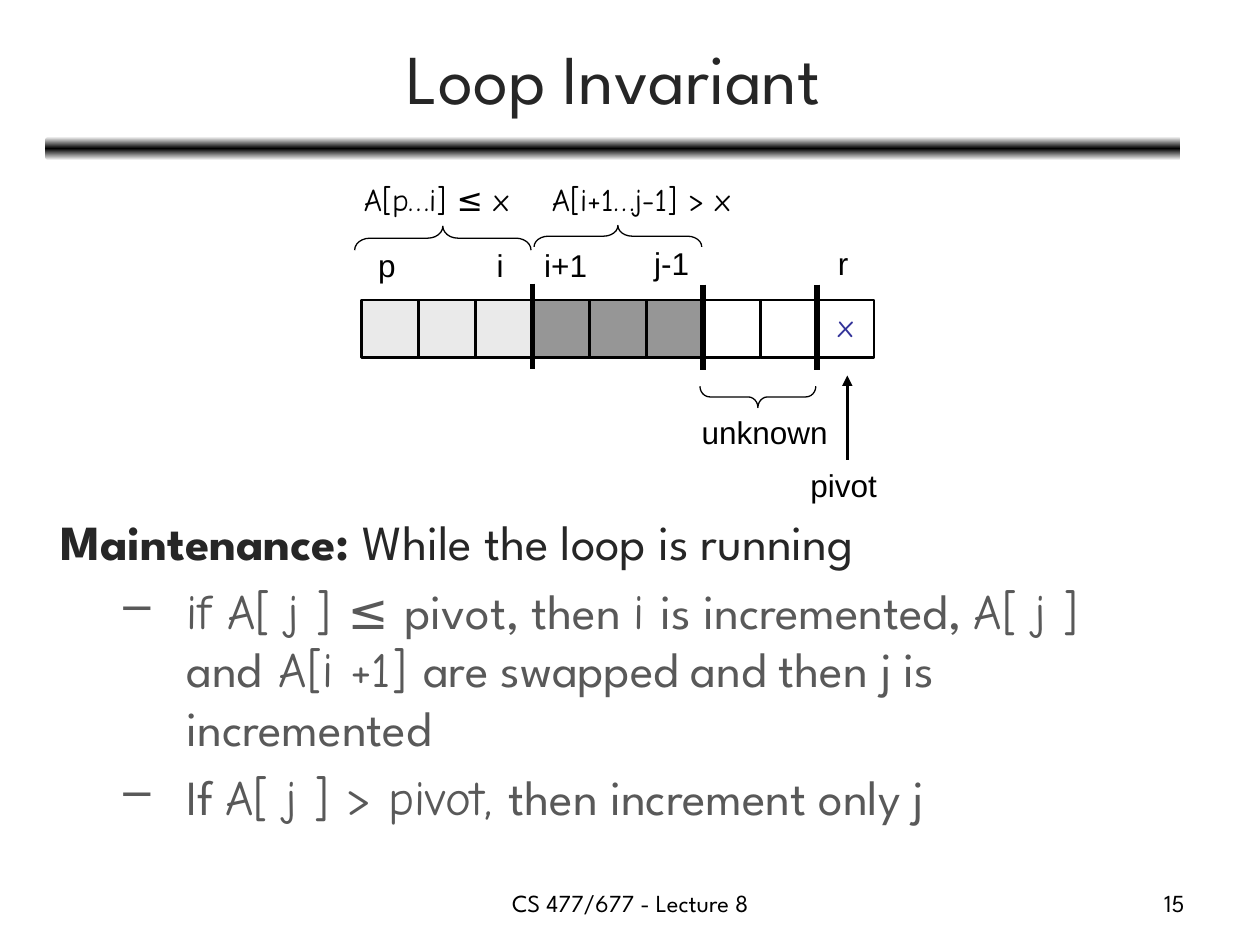
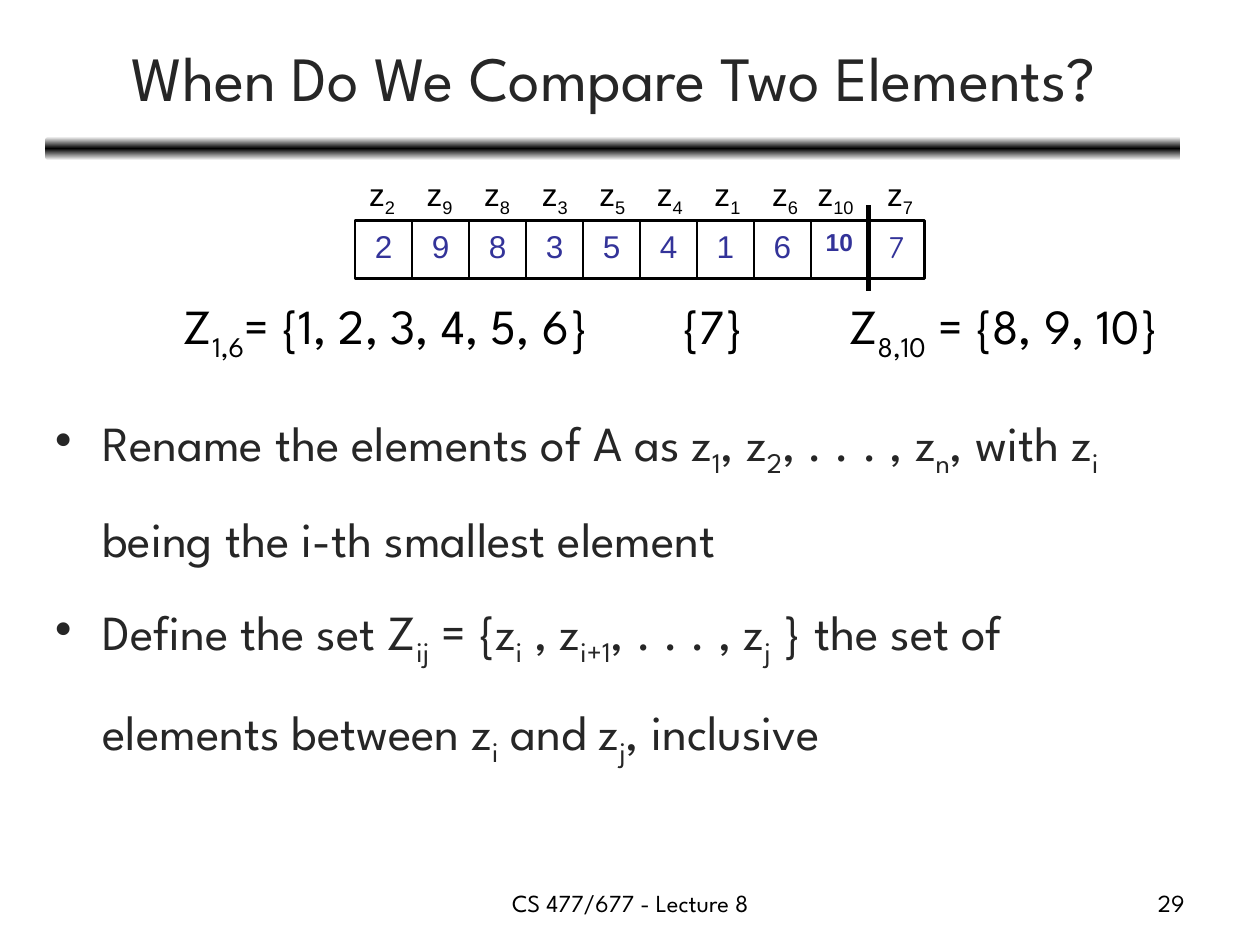
from copy import deepcopy

from lxml.etree import SubElement
from pptx import Presentation
from pptx.dml.color import RGBColor
from pptx.enum.shapes import MSO_CONNECTOR, MSO_SHAPE
from pptx.enum.text import MSO_ANCHOR, PP_ALIGN
from pptx.oxml.ns import qn
from pptx.util import Pt

BLACK = RGBColor(0x00, 0x00, 0x00)
WHITE = RGBColor(0xFF, 0xFF, 0xFF)
DARK = RGBColor(0x26, 0x26, 0x26)
GRAY = RGBColor(0x59, 0x59, 0x59)
BLUE = RGBColor(0x33, 0x33, 0x99)
PALE = RGBColor(0xEA, 0xEA, 0xEA)
MID = RGBColor(0x96, 0x96, 0x96)
SANS, HAND, ARIAL = "League Spartan", "Comic Neue", "Arial"
LEFT, MIDDLE, RIGHT = PP_ALIGN.LEFT, PP_ALIGN.CENTER, PP_ALIGN.RIGHT
CELL_W, CELL_H = 32.55, 33.1


def frame(slide, x, y, w, h, wrap=True):
    """Add an empty text box and return its text frame."""
    text = slide.shapes.add_textbox(Pt(x), Pt(y), Pt(w), Pt(h)).text_frame
    text.word_wrap = wrap
    return text


def write(box, text, size=18, font=ARIAL, color=BLACK, align=LEFT, bold=False,
          alt=None, before=0, lines=None, left=0, hang=0, bullet=None):
    """Add a paragraph; every second part between bars takes the alt format:
    "sub", "bold" or the name of a font."""
    para = box.paragraphs[0]
    if para.runs:
        para = box.add_paragraph()
        para.space_before = Pt(before)
    para.alignment = align
    if lines:
        para.line_spacing = lines
    if left:
        props = para._p.get_or_add_pPr()
        props.set("marL", str(Pt(left)))
        props.set("indent", str(-Pt(hang)))
        if bullet:
            SubElement(props, qn("a:buChar")).set("char", bullet)
    for i, part in enumerate(text.split("|")):
        if not part:
            continue
        run = para.add_run()
        run.text = part
        style = alt if i % 2 else None
        run.font.size = Pt(size)
        run.font.name = HAND if style == HAND else font
        run.font.bold = bold or style == "bold"
        run.font.color.rgb = color
        if style == "sub":
            run.font._element.set("baseline", "-25000")


deck = Presentation()
deck.slide_width, deck.slide_height = Pt(720), Pt(540)
loop = deck.slides.add_slide(deck.slide_layouts[6])
pairs = deck.slides.add_slide(deck.slide_layouts[6])

# Band, title, footer and page number
for slide, title, size, page in [
    (loop, "Loop Invariant", 40, "15"),
    (pairs, "When Do We Compare Two Elements?", 36, "29"),
]:
    band = slide.shapes.add_shape(MSO_SHAPE.ROUNDED_RECTANGLE, Pt(26), Pt(78), Pt(648.7), Pt(13.7))
    band.shadow.inherit = False
    band.line.fill.background()
    band.fill.gradient()
    band.fill.gradient_angle = 90
    stops = band._element.spPr.find(".//" + qn("a:gsLst"))
    stops.insert(1, deepcopy(stops[0]))
    for stop, color, place in zip(band.fill.gradient_stops, (WHITE, BLACK, WHITE), (0, 0.5, 1)):
        stop.color.rgb = color
        stop.position = place
    head = frame(slide, 26.6, 8, 648, 71.3)
    head.vertical_anchor = MSO_ANCHOR.MIDDLE
    write(head, title, size=size, font=SANS, color=DARK, align=MIDDLE)
    write(frame(slide, 246.2, 504, 228.2, 25.2), "CS 477/677 - Lecture 8",
          size=14, font=SANS, align=MIDDLE)
    write(frame(slide, 516.2, 504, 167.8, 25.2), page, size=14, font=SANS, align=RIGHT)

# Array cells on both slides: value and fill
parts = [("", PALE)] * 3 + [("", MID)] * 3 + [("", None)] * 2 + [("x", None)]
values = [(v, None) for v in "2 9 8 3 5 4 1 6 10 7".split()]
for slide, left, top, cells in [(loop, 206.6, 171.4, parts), (pairs, 203, 126, values)]:
    for i, (value, fill) in enumerate(cells):
        cell = slide.shapes.add_shape(MSO_SHAPE.RECTANGLE, Pt(left + i * CELL_W), Pt(top),
                                      Pt(CELL_W), Pt(CELL_H))
        cell.shadow.inherit = False
        cell.line.color.rgb = BLACK
        cell.line.width = Pt(1.5)
        if fill:
            cell.fill.solid()
            cell.fill.fore_color.rgb = fill
        else:
            cell.fill.background()
        if value:
            cell.text_frame.vertical_anchor = MSO_ANCHOR.TOP
            write(cell.text_frame, value, size=14 if value == "10" else 18, color=BLUE,
                  font=HAND if value in "x7" else ARIAL, align=MIDDLE, bold=value == "10")

# Thick dividers and the pivot arrow
for slide, x, start, end, width in [
    (loop, 304.2, 162, 211, 3), (loop, 401.8, 162.7, 211.7, 3),
    (loop, 466.9, 162.7, 211.7, 3), (pairs, 496.1, 117.4, 166.3, 3),
    (loop, 484.2, 262.8, 214.6, 1.5),
]:
    line = slide.shapes.add_connector(MSO_CONNECTOR.STRAIGHT, Pt(x), Pt(start), Pt(x), Pt(end))
    line.line.color.rgb = BLACK
    line.line.width = Pt(width)
    if end < start:
        SubElement(line.line._get_or_add_ln(), qn("a:tailEnd")).set("type", "triangle")
    SubElement(line._element.spPr, qn("a:effectLst"))

# Braces: box before turning, angle, curl
for x, y, w, h, angle, curl in [
    (246.2, 85.7, 13.7, 100.8, 90, 0.63),
    (347, 87.1, 12.2, 95.8, 90, 0.67),
    (427, 193.7, 12.2, 66.2, 270, 0.46),
]:
    brace = loop.shapes.add_shape(MSO_SHAPE.LEFT_BRACE, Pt(x), Pt(y), Pt(w), Pt(h))
    brace.rotation = angle
    brace.adjustments[0] = curl
    brace.shadow.inherit = False
    brace.fill.background()
    brace.line.color.rgb = BLACK
    brace.line.width = Pt(0.75)

# Labels around the array
write(frame(loop, 200.9, 99.4, 105.1, 28.8), "A[p…i] ≤ x", font=HAND)
write(frame(loop, 308.2, 99.4, 137.5, 28.8), "A[i+1…j-1] > x", font=HAND)
for text, x, y, w in [
    ("p", 208.8, 136.8, 24.5), ("i", 276.5, 136.8, 18.7), ("i+1", 303.8, 136.8, 38.9),
    ("j-1", 366.5, 136.1, 34.6), ("r", 471.6, 136.1, 20.2),
    ("unknown", 393.8, 232.6, 86.4), ("pivot", 455.8, 262.8, 52.6),
]:
    write(frame(loop, x, y, w, 28.8, wrap=False), text, align=MIDDLE)

body = frame(loop, 27.4, 288.7, 628.6, 232.6)
write(body, "|Maintenance: |While the loop is running", size=28, font=SANS, color=DARK,
      alt="bold", left=41.8, hang=41.8)
for text in [
    "|if A[ j ] ≤ |pivot, then |i |is incremented, |A[ j ] |and| A[i +1] |"
    "are swapped and then j is incremented",
    "If |A[ j ] > pivot, |then increment only j",
]:
    write(body, text, size=28, font=SANS, color=GRAY, alt=HAND, before=5.6,
          left=72, hang=36, bullet="–")

# Names of the elements, then the sets
for i, (value, _) in enumerate(values):
    x, w = (460.1, 36.7) if value == "10" else (203.8 + i * 32.9, 30.2)
    write(frame(pairs, x, 96.5, w, 28.8, wrap=False), f"z|{value}", alt="sub")
for text, x, w, wrap in [
    ("Z|1,6|= {1, 2, 3, 4, 5, 6}", 97.9, 306.7, True),
    ("{7}", 383, 50.4, False),
    ("Z|8,10| = {8, 9, 10}", 478.1, 213.1, False),
]:
    write(frame(pairs, x, 165.6, w, 41, wrap), text, size=28, font=SANS, alt="sub")

body = frame(pairs, 24.5, 213.1, 648, 288)
for text in [
    "Rename the elements of A as z|1|, z|2|, . . . , z|n|, with z|i| being the i-th smallest element",
    "Define the set Z|ij| = {z|i| , z|i+1|, . . . , z|j| } the set of elements between "
    "z|i| and z|j|, inclusive",
]:
    write(body, text, size=28, font=SANS, color=DARK, alt="sub", lines=1.5,
          left=27, hang=27, bullet="•")

deck.save("out.pptx")
